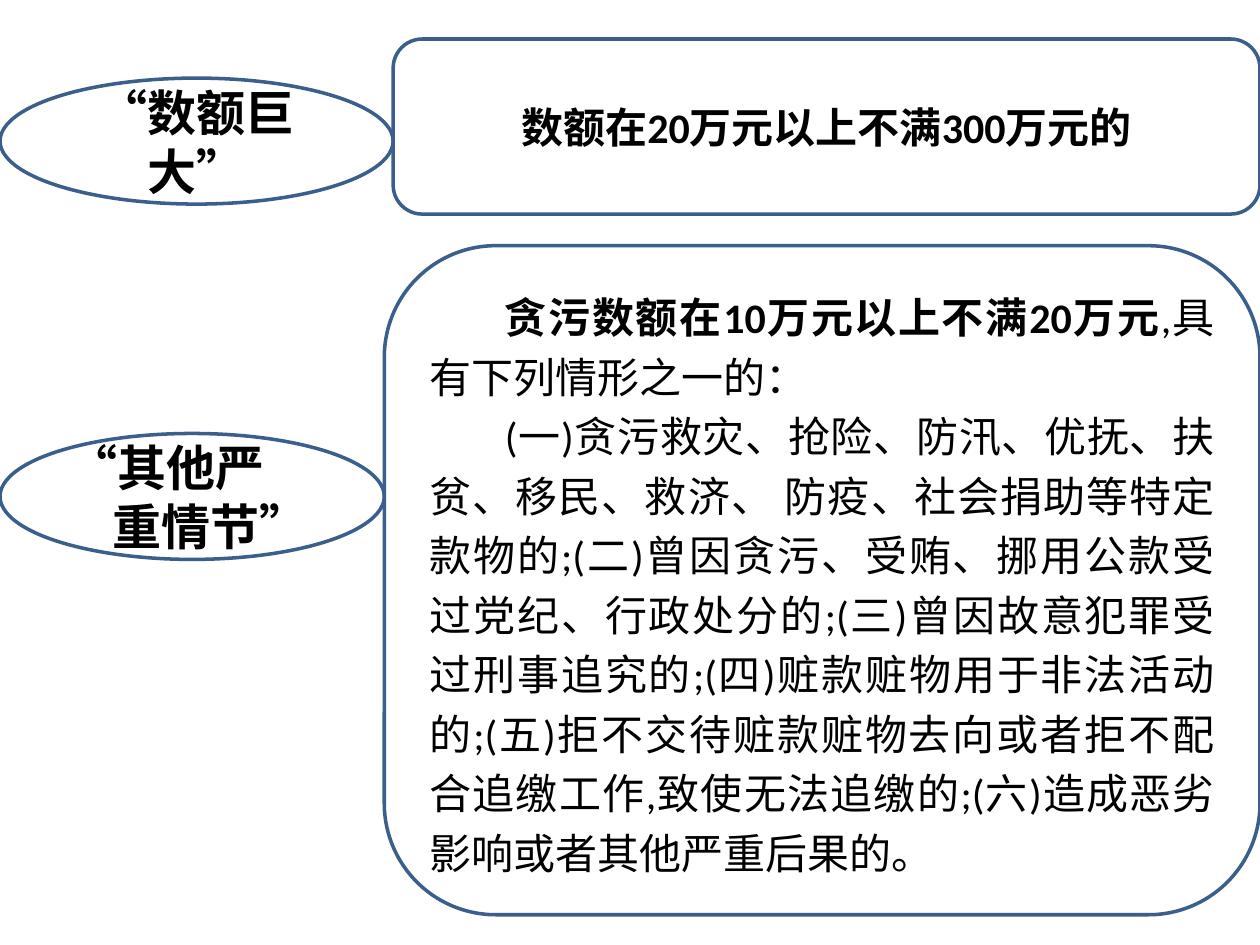
from dataclasses import dataclass

import pptx
import pptx.dml.color
import pptx.enum.shapes
import pptx.enum.text
import pptx.util

SHAPE = pptx.enum.shapes.MSO_SHAPE
ALIGN = pptx.enum.text.PP_ALIGN
RGB = pptx.dml.color.RGBColor
Inches, Pt = pptx.util.Inches, pptx.util.Pt


@dataclass(frozen=True)
class Theme:
    font: str = "Calibri"
    text: RGB = RGB(0, 0, 0)
    fill: RGB = RGB(255, 255, 255)
    line: RGB = RGB(0x3A, 0x5F, 0x8C)
    line_width: int = 2
    label_size: int = 28
    body_size: int = 24
    body_leading: int = 34


THEME = Theme()


@dataclass(frozen=True)
class Para:
    runs: tuple[tuple[str, bool], ...]  # (text, bold)
    align: ALIGN | None = ALIGN.CENTER
    left: float = 0  # left margin, inches
    first: float = 0  # first-line indent, inches
    leading: int | None = None


@dataclass(frozen=True)
class Row:
    """A label and the box that fills the width beside it, in % of the slide."""
    label_width: float
    label_top: float
    box_top: float
    box_height: float
    label: tuple[Para, ...]
    box: tuple[Para, ...]


def body(*runs: tuple[str, bool]) -> Para:
    return Para(runs, ALIGN.JUSTIFY, first=0.6, leading=THEME.body_leading)


LABEL_HEIGHT = 13.33

ROWS = (
    Row(31.2, 8.27, 4.13, 18.53,
        (Para((("“数额巨大”", True),)),),
        (Para((("数额在20万元以上不满300万元的", True),)),)),
    Row(30.5, 45.87, 26, 70.8,
        (Para((("“其他严", True),), ALIGN.LEFT),
         Para((("重情节”", True),), ALIGN.LEFT, left=0.35)),
        (body(("贪污数额在10万元以上不满20万元", True),
              (",具有下列情形之一的：", False)),
         body(("(一)贪污救灾、抢险、防汛、优抚、扶贫、移民、救济、 防疫、"
               "社会捐助等特定款物的;(二)曾因贪污、受贿、挪用公款受过党纪、"
               "行政处分的;(三)曾因故意犯罪受过刑事追究的;"
               "(四)赃款赃物用于非法活动的;(五)拒不交待赃款赃物去向"
               "或者拒不配合追缴工作,致使无法追缴的;"
               "(六)造成恶劣影响或者其他严重后果的。", False)))),
)

prs = pptx.Presentation()
prs.slide_width, prs.slide_height = Inches(10), Inches(7.5)
slide = prs.slides.add_slide(prs.slide_layouts[6])


def add_text(p, para: Para, size: int) -> None:
    p.alignment = para.align
    p.font.name = THEME.font
    p.font.size = Pt(size)
    p.font.color.rgb = THEME.text
    if para.leading:
        p.line_spacing = Pt(para.leading)
    # Indents have no public property
    pPr = p._p.get_or_add_pPr()
    pPr.set("marL", str(Inches(para.left)))
    pPr.set("indent", str(Inches(para.first)))
    for text, bold in para.runs:
        r = p.add_run()
        r.text = text
        r.font.name = THEME.font
        r.font.size = Pt(size)
        r.font.color.rgb = THEME.text
        r.font.bold = bold


def add_panel(kind: SHAPE, left: float, top: float, width: float,
              height: float, paras: tuple[Para, ...], size: int) -> None:
    w, h = prs.slide_width / 100, prs.slide_height / 100
    sp = slide.shapes.add_shape(kind, int(left * w), int(top * h),
                                int(width * w), int(height * h))
    sp.shadow.inherit = False
    sp.fill.solid()
    sp.fill.fore_color.rgb = THEME.fill
    sp.line.color.rgb = THEME.line
    sp.line.width = Pt(THEME.line_width)
    tf = sp.text_frame
    tf.word_wrap = True
    tf.vertical_anchor = pptx.enum.text.MSO_ANCHOR.MIDDLE
    for i, para in enumerate(paras):
        add_text(tf.add_paragraph() if i else tf.paragraphs[0], para, size)


# Each row: oval label on the left, rounded box to the right edge
for row in ROWS:
    add_panel(SHAPE.OVAL, 0, row.label_top, row.label_width, LABEL_HEIGHT,
              row.label, THEME.label_size)
    add_panel(SHAPE.ROUNDED_RECTANGLE, row.label_width, row.box_top,
              100 - row.label_width, row.box_height, row.box, THEME.body_size)

prs.save("out.pptx")
